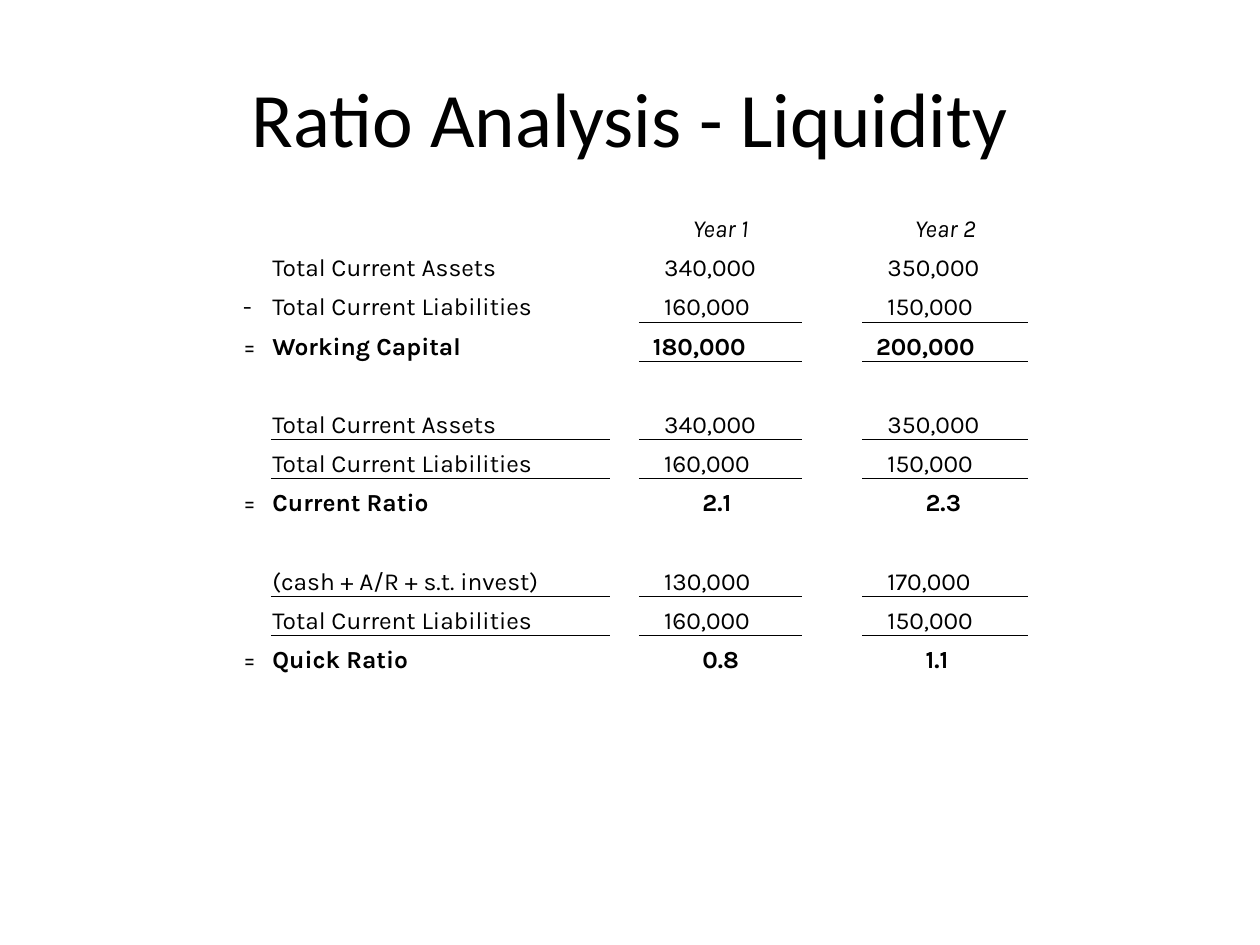
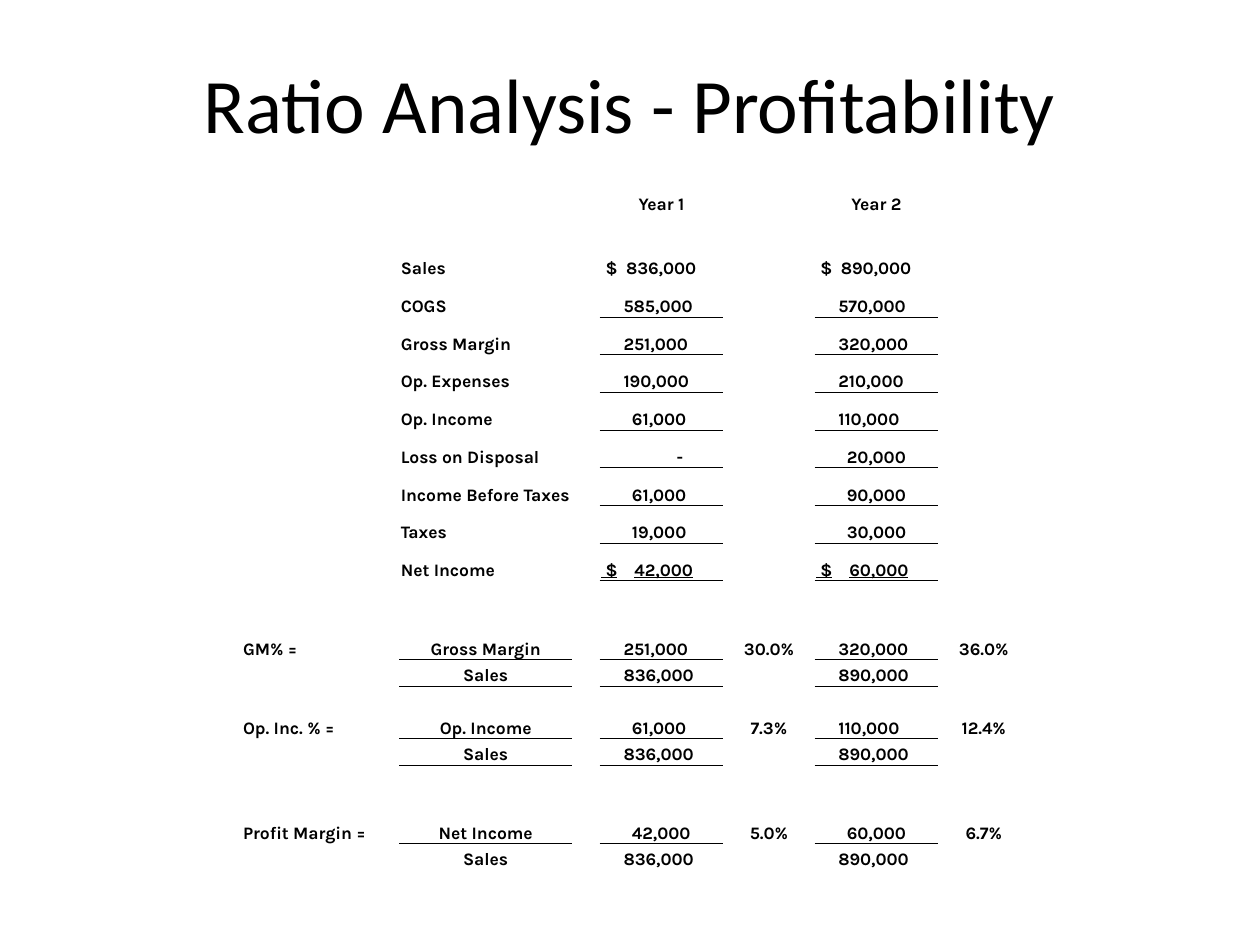
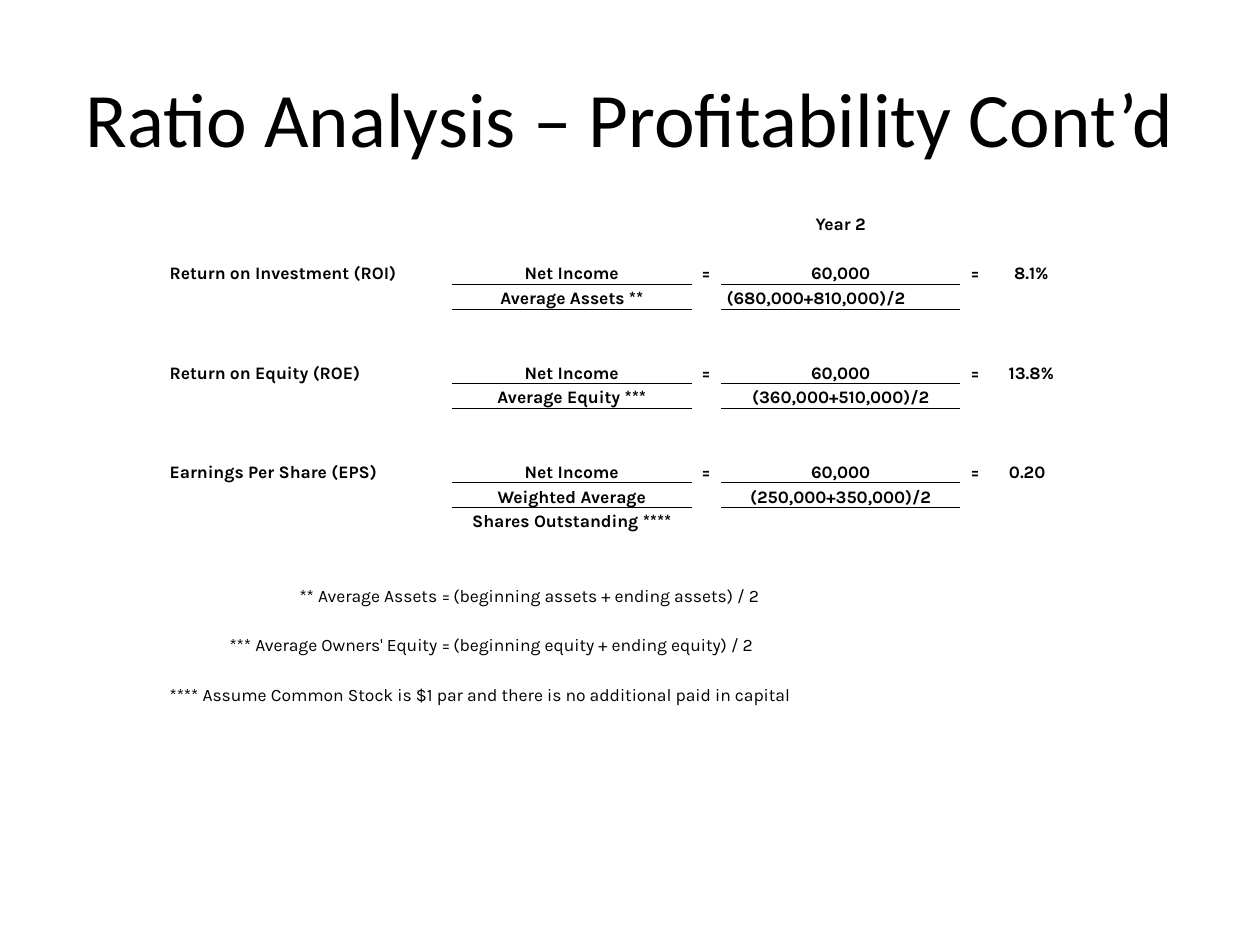
from dataclasses import dataclass

from lxml import etree
from pptx import Presentation
from pptx.dml.color import RGBColor
from pptx.enum import text
from pptx.oxml import ns
from pptx.util import Cm, Pt

BLACK = RGBColor(0x00, 0x00, 0x00)
TITLE_FONT, BODY_FONT = "Calibri", "Karla"
TITLE_SIZE = 44
PAD = 0.03  # cell inset, cm
RULE_WIDTH = 0.5
NO_STYLE_NO_GRID = "{2D5ABB26-0587-4C30-8999-92F81FD0307C}"
LEFT, CENTER, RIGHT = text.PP_ALIGN.LEFT, text.PP_ALIGN.CENTER, text.PP_ALIGN.RIGHT


@dataclass
class Entry:
    """One table cell; lengths are in centimetres."""
    words: str
    align: text.PP_ALIGN = LEFT
    indent: float = 0
    bold: bool = True
    italic: bool = False
    underline: bool = False
    ruled: bool = False  # line between this cell and the one below
    tab: float = 0
    span: int = 1


Entries = dict[tuple[int, int], Entry]


@dataclass
class Statement:
    title: str
    title_height: float
    left: float
    top: float
    columns: list[float]
    heights: list[float]
    size: int
    entries: Entries


# Drawing

def add_words(paragraph, words: str, font: str, size: int):
    run = paragraph.add_run()
    run.text = words
    run.font.name, run.font.size = font, Pt(size)
    run.font.color.rgb = BLACK
    return run


def add_title(slide, title: str, height: float) -> None:
    box = slide.shapes.add_textbox(Cm(1.27), Cm(0.76), Cm(22.86), Cm(height))
    frame = box.text_frame
    frame.word_wrap = True
    frame.vertical_anchor = text.MSO_ANCHOR.MIDDLE
    frame.paragraphs[0].alignment = CENTER
    add_words(frame.paragraphs[0], title, TITLE_FONT, TITLE_SIZE)


def add_rule(cell, edge: str) -> None:
    line = etree.Element(ns.qn(f"a:{edge}"), w=str(Pt(RULE_WIDTH)))
    fill = etree.SubElement(line, ns.qn("a:solidFill"))
    etree.SubElement(fill, ns.qn("a:srgbClr"), val=str(BLACK))
    cell._tc.get_or_add_tcPr().insert(0, line)


def prepare_cell(cell, size: int, empty: bool) -> None:
    cell.fill.background()
    cell.vertical_anchor = text.MSO_ANCHOR.BOTTOM
    cell.margin_left = cell.margin_right = cell.margin_top = Cm(PAD)
    cell.margin_bottom = 0
    if empty:  # keeps unused rows from growing
        etree.SubElement(cell.text_frame.paragraphs[0]._p,
                         ns.qn("a:endParaRPr"), sz=str(size * 100))


def fill_cell(cell, entry: Entry, size: int) -> None:
    cell.margin_left = Cm(PAD + entry.indent)
    paragraph = cell.text_frame.paragraphs[0]
    paragraph.alignment = entry.align
    run = add_words(paragraph, entry.words, BODY_FONT, size)
    run.font.bold, run.font.italic = entry.bold, entry.italic
    run.font.underline = entry.underline
    if entry.tab:
        stops = etree.SubElement(paragraph._p.get_or_add_pPr(), ns.qn("a:tabLst"))
        etree.SubElement(stops, ns.qn("a:tab"), pos=str(Cm(entry.tab)), algn="l")


def add_statement(deck, statement: Statement) -> None:
    slide = deck.slides.add_slide(deck.slide_layouts[6])
    add_title(slide, statement.title, statement.title_height)
    columns, heights = statement.columns, statement.heights
    table = slide.shapes.add_table(
        len(heights), len(columns), Cm(statement.left), Cm(statement.top),
        Cm(sum(columns)), Cm(sum(heights))).table
    table.first_row = table.horz_banding = False
    table._tbl.tblPr.find(ns.qn("a:tableStyleId")).text = NO_STYLE_NO_GRID
    for column, width in zip(table.columns, columns):
        column.width = Cm(width)
    for r, height in enumerate(heights):
        table.rows[r].height = Cm(height)
        for c in range(len(columns)):
            prepare_cell(table.cell(r, c), statement.size,
                         (r, c) not in statement.entries)
    for (r, c), entry in statement.entries.items():
        cell = table.cell(r, c)
        if entry.span > 1:
            cell.merge(table.cell(r, c + entry.span - 1))
        fill_cell(cell, entry, statement.size)
        if entry.ruled:
            add_rule(cell, "lnB")
            add_rule(table.cell(r + 1, c), "lnT")


# Liquidity

def liquidity() -> Statement:
    assets = ("Total Current Assets", "340,000", "350,000")
    liabilities = ("Total Current Liabilities", "160,000", "150,000")
    quick_assets = ("(cash + A/R + s.t. invest)", "130,000", "170,000")
    # row: (sign, line, ruled columns)
    lines = {
        1: ("", assets, ()),
        2: ("-", liabilities, (3, 5)),
        3: ("=", ("Working Capital", "180,000", "200,000"), ()),
        5: ("", assets, (1, 3, 5)),
        6: ("", liabilities, ()),
        7: ("=", ("Current Ratio", "2.1", "2.3"), ()),
        9: ("", quick_assets, (1, 3, 5)),
        10: ("", liabilities, ()),
        11: ("=", ("Quick Ratio", "0.8", "1.1"), ()),
    }
    entries: Entries = {
        (0, c): Entry(year, CENTER, bold=False, italic=True)
        for c, year in ((3, "Year 1"), (5, "Year 2"))}
    for r, (sign, line, ruled) in lines.items():
        result = sign == "="
        if sign:
            entries[r, 0] = Entry(sign, bold=False)
        for c, words in zip((1, 3, 5), line):
            indent = 0 if c == 1 else 0.48 if not result else 0.25 if "," in words else 1.25
            entries[r, c] = Entry(words, indent=indent, bold=result, ruled=c in ruled)
    return Statement("Ratio Analysis - Liquidity", 3.18, 4.87, 4.23,
                     [0.59, 6.83, 0.59, 3.29, 1.21, 3.35],
                     [0.68] + [0.79] * 11, 14, entries)


# Profitability

def amount(words: str, ruled: bool = False) -> Entry:
    indent = {7: 0.45, 6: 0.62}.get(len(words), 1.52)
    return Entry(words, indent=indent, ruled=ruled)


def profitability() -> Statement:
    income = [
        ("COGS", "585,000", "570,000"),
        ("Gross Margin", "251,000", "320,000"),
        ("Op. Expenses", "190,000", "210,000"),
        ("Op. Income", "61,000", "110,000"),
        ("Loss on Disposal", "-", "20,000"),
        ("Income Before Taxes", "61,000", "90,000"),
        ("Taxes", "19,000", "30,000"),
    ]
    margins = {
        13: ("GM% =", "Gross Margin", "251,000", "30.0%", "320,000", "36.0%"),
        16: ("Op. Inc. % =", "Op. Income", "61,000", "7.3%", "110,000", "12.4%"),
        19: ("Profit Margin =", "Net Income", "42,000", "5.0%", "60,000", "6.7%"),
    }
    entries: Entries = {
        (0, 3): Entry("Year 1", CENTER),
        (0, 5): Entry("Year 2", CENTER),
        (2, 1): Entry("Sales"),
        (2, 3): Entry(" $\t836,000", tab=0.5),
        (2, 5): Entry(" $\t890,000", tab=0.5),
        (10, 1): Entry("Net Income"),
        (10, 3): Entry(" $\t42,000", tab=0.67, underline=True),
        (10, 5): Entry(" $\t60,000", tab=0.67, underline=True),
    }
    # Every deduction, on the odd rows, is ruled off
    for r, (label, year1, year2) in enumerate(income, start=3):
        entries[r, 1] = Entry(label, span=2 if label == "Income Before Taxes" else 1)
        entries[r, 3] = amount(year1, r % 2 == 1)
        entries[r, 5] = amount(year2, r % 2 == 1)
    for r, (name, top, year1, share1, year2, share2) in margins.items():
        entries |= {
            (r, 0): Entry(name),
            (r, 1): Entry(top, CENTER, ruled=True),
            (r, 3): amount(year1, True),
            (r, 4): Entry(share1, CENTER),
            (r, 5): amount(year2, True),
            (r, 6): Entry(share2, CENTER),
            (r + 1, 1): Entry("Sales", CENTER),
            (r + 1, 3): amount("836,000"),
            (r + 1, 5): amount("890,000"),
        }
    return Statement("Ratio Analysis - Profitability", 2.62, 4.87, 3.81,
                     [3.18, 3.48, 0.56, 2.49, 1.84, 2.49, 1.84],
                     [0.53] * 2 + [0.76] * 9 + [0.53] * 8 + [1.06, 0.53], 10, entries)


# Returns and earnings per share

def returns() -> Statement:
    ratios = {
        2: ("Return on Investment (ROI)", "Average Assets **",
            Entry(" (680,000+810,000)/2"), Entry("8.1%", CENTER)),
        6: ("Return on Equity (ROE)", "Average Equity ***",
            Entry(" (360,000+510,000)/2 ", CENTER), Entry("13.8%", CENTER)),
        10: ("Earnings Per Share (EPS)", "Weighted Average",
             Entry(" (250,000+350,000)/2 ", CENTER), Entry("0.20", indent=0.36)),
    }
    footnotes = {
        15: ("** Average Assets =", "(beginning assets + ending assets) / 2"),
        17: ("*** Average Owners' Equity =", "(beginning equity + ending equity) / 2"),
    }
    entries: Entries = {
        (0, 3): Entry("Year 2", CENTER),
        (12, 1): Entry("Shares Outstanding ****", CENTER),
        (19, 0): Entry("**** Assume Common Stock is $1 par and there is no "
                       "additional paid in capital", bold=False, span=4),
    }
    for r, (name, base, base_sum, result) in ratios.items():
        entries |= {
            (r, 0): Entry(name),
            (r, 1): Entry("Net Income", CENTER, ruled=True),
            (r, 2): Entry("=", CENTER),
            (r, 3): Entry(" 60,000 ", CENTER, ruled=True),
            (r, 4): Entry("=", CENTER),
            (r, 5): result,
            (r + 1, 1): Entry(base, CENTER),
            (r + 1, 3): base_sum,
        }
    for r, (term, meaning) in footnotes.items():
        entries[r, 0] = Entry(term, RIGHT, bold=False)
        entries[r, 1] = Entry(meaning, bold=False, span=3)
    return Statement("Ratio Analysis – Profitability Cont’d", 3.18, 3.39, 4.23,
                     [5.72, 4.83, 0.59, 4.83, 0.59, 1.68], [0.5] * 20, 10, entries)


def main() -> None:
    deck = Presentation()
    deck.slide_width, deck.slide_height = Cm(25.4), Cm(19.05)
    for statement in (liquidity(), profitability(), returns()):
        add_statement(deck, statement)
    deck.save("out.pptx")


if __name__ == "__main__":
    main()
